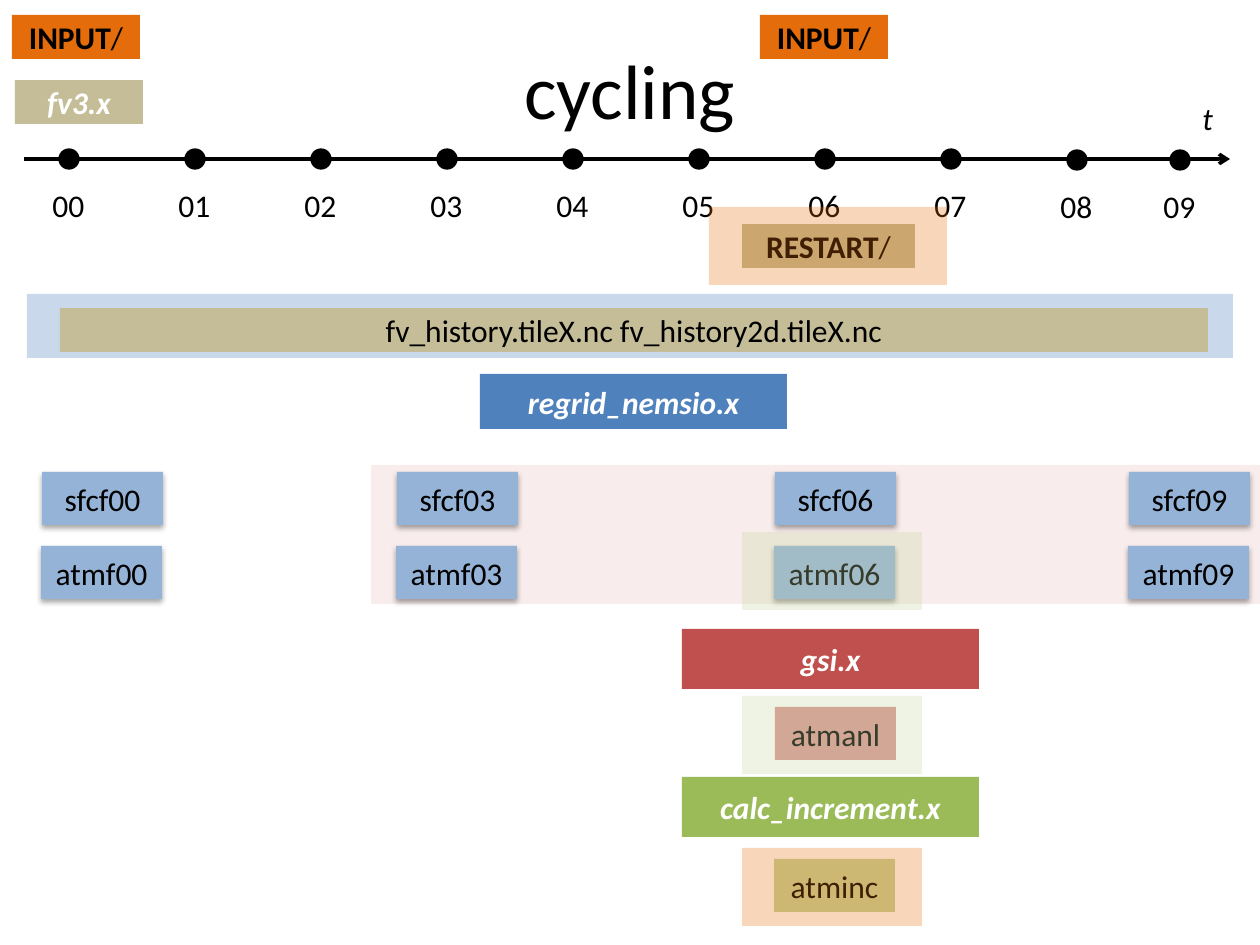
from lxml import etree
from pptx import Presentation
from pptx import util as u
from pptx.dml.color import RGBColor
from pptx.enum import shapes, text
from pptx.oxml.ns import qn

PX = 914400 / 126
BLACK, WHITE = "000000", "FFFFFF"
ORANGE, TAN, BLUE, PALE_BLUE = "E46C0A", "C4BD97", "4F81BD", "95B3D7"
RED, ROSE, PINK = "C0504D", "D99694", "F2DCDB"
GREEN, PALE_GREEN = "9BBB59", "C3D69B"

FORECAST_X = {"03": 397, "06": 775, "09": 1129, "00": 42}


def px(*lengths):
    return [u.Emu(round(length * PX)) for length in lengths]


def rgb(value):
    return RGBColor.from_string(value)


def add_xml(parent, tag, **attributes):
    return etree.SubElement(parent, qn(tag), attributes)


def write(frame, *runs, size=18, color=BLACK, bold=False, italic=False,
          align=text.PP_ALIGN.CENTER, anchor=text.MSO_ANCHOR.MIDDLE):
    """Fill the frame with one paragraph; only its first run is bold."""
    frame.vertical_anchor = anchor
    paragraph = frame.paragraphs[0]
    paragraph.alignment = align
    for index, words in enumerate(runs):
        run = paragraph.add_run()
        run.text = words
        font = run.font
        font.name, font.size = "Calibri", u.Pt(size)
        font.bold, font.italic = bold and index == 0, italic
        font.color.rgb = rgb(color)


def add_block(parent, box, fill, *runs, opacity=100, **style):
    block = parent.add_shape(shapes.MSO_SHAPE.RECTANGLE, *px(*box))
    block.shadow.inherit = False
    block.fill.solid()
    block.fill.fore_color.rgb = rgb(fill)
    block.line.fill.background()
    if opacity < 100:
        color = block.fill._xPr.find(qn("a:solidFill"))[0]
        add_xml(color, "a:alpha", val=str(opacity * 1000))
    if runs:
        write(block.text_frame, *runs, **style)
    return block


def add_program(parent, box, fill, name):
    add_block(parent, box, fill, name, color=WHITE, bold=True, italic=True)


def add_directory(parent, box, fill, name):
    add_block(parent, box, fill, name, "/", bold=True)


def add_label(parent, box, words, **style):
    frame = parent.add_textbox(*px(*box)).text_frame
    frame.word_wrap = False
    frame.auto_size = text.MSO_AUTO_SIZE.SHAPE_TO_FIT_TEXT
    write(frame, words, align=text.PP_ALIGN.LEFT,
          anchor=text.MSO_ANCHOR.TOP, **style)


def add_time_axis(parent):
    axis = parent.add_connector(shapes.MSO_CONNECTOR.STRAIGHT,
                                *px(24, 159, 1230, 159))
    axis.line.color.rgb = rgb(BLACK)
    axis.line.width = u.Pt(2)
    add_xml(axis.line._get_or_add_ln(), "a:tailEnd", type="arrow")
    add_xml(axis._element.spPr, "a:effectLst")


def add_hour(parent, hour):
    center = 1180 if hour == 9 else 69 + 126 * hour
    drop = 1 if hour >= 8 else 0
    dot = parent.add_shape(shapes.MSO_SHAPE.OVAL,
                           *px(center - 10, 149 + drop, 20, 20))
    dot.shadow.inherit = False
    dot.fill.solid()
    dot.fill.fore_color.rgb = rgb(BLACK)
    dot.line.color.rgb = rgb(BLACK)
    dot.line.width = u.Pt(0.75)
    add_label(parent, (center - 29, 180 + drop, 58, 50), f"{hour:02d}")


def add_timeline(slide):
    timeline = slide.shapes.add_group_shape().shapes
    add_time_axis(timeline)
    for hour in range(10):
        add_hour(timeline, hour)


def add_forecast(slide, hour, left):
    """Group the surface and atmosphere files of one forecast hour."""
    pair = slide.shapes.add_group_shape().shapes
    for prefix, x, y in (("sfcf", left, 472), ("atmf", left - 1, 546)):
        file_block = add_block(pair, (x, y, 121, 53), PALE_BLUE, prefix + hour)
        effects = file_block._element.spPr.find(qn("a:effectLst"))
        shadow = add_xml(effects, "a:outerShdw", blurRad="40000", dist="23000",
                         dir="5400000", rotWithShape="0")
        color = add_xml(shadow, "a:srgbClr", val=BLACK)
        add_xml(color, "a:alpha", val="35000")


def add_title(slide, words):
    title = slide.shapes.title
    title.left, title.top, title.width, title.height = px(63, 10, 1134, 158)
    write(title.text_frame, words, size=44)


def main():
    deck = Presentation()
    deck.slide_width, deck.slide_height = px(1260, 945)
    slide = deck.slides.add_slide(deck.slide_layouts[5])
    canvas = slide.shapes
    add_title(slide, "cycling")

    add_block(canvas, (371, 465, 889, 139), PINK, opacity=50)
    add_program(canvas, (682, 629, 297, 60), RED, "gsi.x")
    add_block(canvas, (27, 294, 1206, 64), PALE_BLUE, opacity=50)
    add_program(canvas, (480, 374, 307, 55), BLUE, "regrid_nemsio.x")

    add_timeline(slide)
    add_block(canvas, (60, 308, 1148, 44), TAN,
              "fv_history.tileX.nc fv_history2d.tileX.nc")
    for hour, left in FORECAST_X.items():
        add_forecast(slide, hour, left)

    add_block(canvas, (775, 707, 121, 53), ROSE, "atmanl")
    add_directory(canvas, (742, 224, 173, 44), TAN, "RESTART")
    add_program(canvas, (682, 777, 297, 60), GREEN, "calc_increment.x")
    add_block(canvas, (774, 859, 121, 53), PALE_GREEN, "atminc")
    for left in (12, 760):
        add_directory(canvas, (left, 15, 128, 44), ORANGE, "INPUT")
    add_program(canvas, (15, 80, 128, 44), TAN, "fv3.x")

    for box, fill in (((742, 532, 180, 78), PALE_GREEN),
                      ((742, 696, 180, 78), PALE_GREEN),
                      ((742, 848, 180, 78), ORANGE),
                      ((709, 207, 238, 78), ORANGE)):
        add_block(canvas, box, fill, opacity=28)
    add_label(canvas, (1190, 93, 44, 50), "t", italic=True)

    deck.save("out.pptx")


if __name__ == "__main__":
    main()
